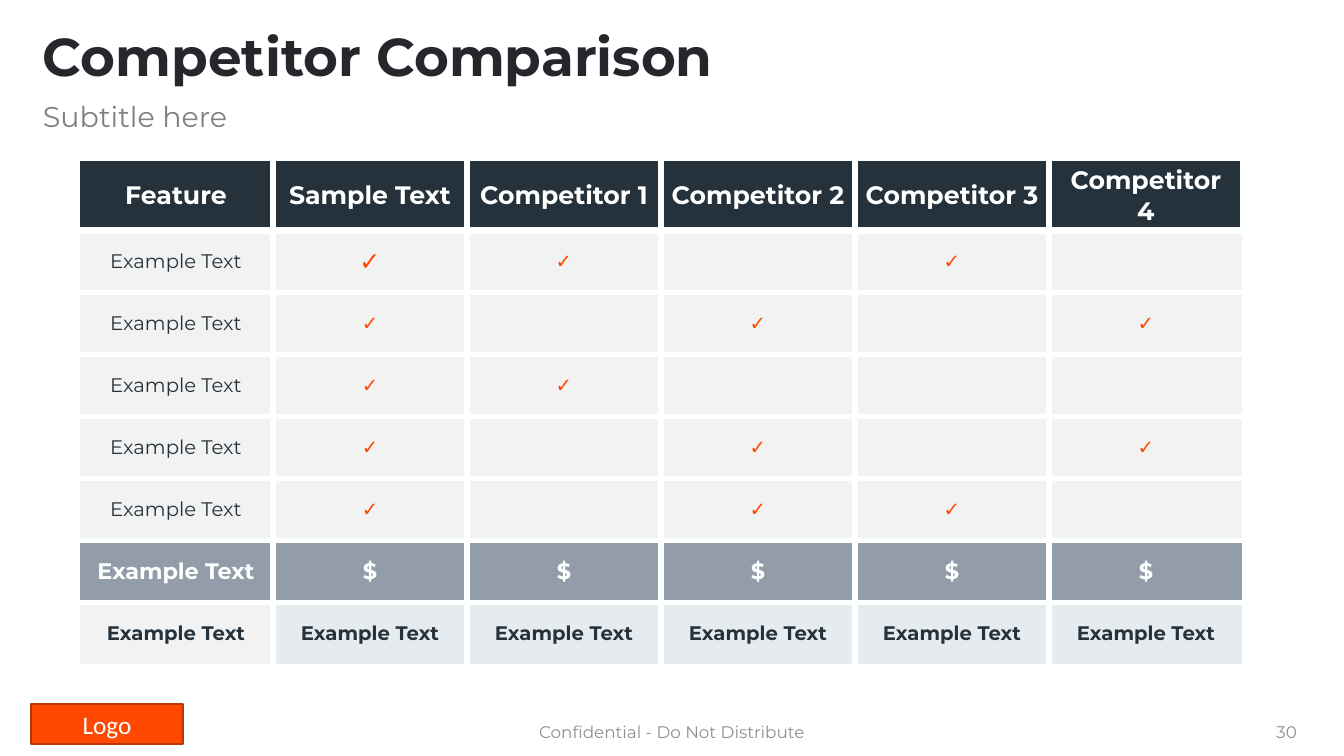
from lxml.etree import SubElement
from pptx import Presentation
from pptx.dml.color import RGBColor
from pptx.enum.shapes import MSO_SHAPE
from pptx.enum.text import MSO_ANCHOR, PP_ALIGN
from pptx.oxml.ns import qn
from pptx.util import Pt

EMU_PER_PX = 914400 / 100.8
WHITE, DARK, ORANGE = "FEFFFF", "25323C", "FF4800"
PALE, SLATE, MIST = "F2F2F2", "939DA9", "E5EBEF"
BODY_INK, GREY = "25323B", "8E9092"
FONT = "Montserrat"

COLUMN_WIDTH, ROW_HEIGHT = 194, 62
HEADINGS = ["Feature", "Sample Text"] + [f"Competitor {n}" for n in range(1, 5)]
# Columns that carry a check mark in each feature row
CHECKED_COLUMNS = [(1, 2, 4), (1, 3, 5), (1, 2), (1, 3, 5), (1, 3, 4)]


def px(length):
    return round(length * EMU_PER_PX)


def color(hex_code):
    return RGBColor.from_string(hex_code)


def paint(fill, hex_code):
    fill.solid()
    fill.fore_color.rgb = color(hex_code)


def write(frame, text, size, ink, bold=False, align=PP_ALIGN.CENTER, font=FONT, spacing=None):
    paragraph = frame.paragraphs[0]
    paragraph.alignment = align
    if spacing:
        paragraph.line_spacing = spacing
    run = paragraph.add_run()
    run.text = text
    run.font.name = font
    run.font.size = Pt(size)
    run.font.bold = bold
    run.font.color.rgb = color(ink)


def add_label(slide, box, text, size, ink, **style):
    frame = slide.shapes.add_textbox(*map(px, box)).text_frame
    frame.word_wrap = True
    frame.vertical_anchor = MSO_ANCHOR.MIDDLE
    write(frame, text, size, ink, **style)


def add_logo_plate(slide):
    plate = slide.shapes.add_shape(MSO_SHAPE.RECTANGLE, *map(px, (31, 704, 152, 40)))
    plate.shadow.inherit = False
    paint(plate.fill, ORANGE)
    plate.line.color.rgb = color("BD3500")
    plate.line.width = Pt(1)
    plate.text_frame.vertical_anchor = MSO_ANCHOR.MIDDLE
    write(plate.text_frame, "Logo", 18, WHITE, font="Calibri")


def add_borders(cell, left, right, top, bottom):
    """Draw the four cell borders in the background colour, widths in points."""
    properties = cell._tc.get_or_add_tcPr()
    for side, width in (("L", left), ("R", right), ("T", top), ("B", bottom)):
        border = SubElement(properties, qn(f"a:ln{side}"), w=str(Pt(width)))
        solid = SubElement(border, qn("a:solidFill"))
        SubElement(solid, qn("a:srgbClr"), val=WHITE)


def comparison_rows():
    """Return each row as cells of (text, size, ink, bold, fill)."""
    rows = [[(heading, 18, WHITE, True, DARK) for heading in HEADINGS]]
    for number, checked in enumerate(CHECKED_COLUMNS):
        row = [("Example Text", 14, BODY_INK, False, PALE)]
        for column in range(1, len(HEADINGS)):
            size = 18 if (number, column) == (0, 1) else 14
            row.append(("✓" if column in checked else "", size, ORANGE, True, PALE))
        rows.append(row)
    companies = len(HEADINGS) - 1
    rows.append([(text, 16, WHITE, True, SLATE) for text in ["Example Text"] + ["$"] * companies])
    rows.append([("Example Text", 14, BODY_INK, True, fill) for fill in [PALE] + [MIST] * companies])
    return rows


def add_comparison_table(slide):
    rows = comparison_rows()
    last_row, last_column = len(rows) - 1, len(HEADINGS) - 1
    table = slide.shapes.add_table(
        len(rows), len(HEADINGS), px(79), px(160),
        px(COLUMN_WIDTH * len(HEADINGS)), px(ROW_HEIGHT * len(rows))).table
    table.first_row = table.horz_banding = False
    for column in table.columns:
        column.width = px(COLUMN_WIDTH)
    for r, row in enumerate(rows):
        table.rows[r].height = px(ROW_HEIGHT)
        for c, (text, size, ink, bold, fill) in enumerate(row):
            cell = table.cell(r, c)
            add_borders(
                cell,
                left=1 if c == 0 else 4.5,
                right=1 if c == last_column and r > 0 else 4.5,
                top={0: 1, 1: 6}.get(r, 4.5),
                bottom={0: 6, last_row: 1}.get(r, 4.5))
            paint(cell.fill, fill)
            cell.vertical_anchor = MSO_ANCHOR.MIDDLE
            if text:
                write(cell.text_frame, text, size, ink, bold)


def main():
    deck = Presentation()
    deck.slide_width, deck.slide_height = px(1344), px(756)
    slide = deck.slides.add_slide(deck.slide_layouts[6])
    paint(slide.background.fill, WHITE)

    add_logo_plate(slide)
    add_label(slide, (33, 25, 1273, 68), "Competitor Comparison", 38, "28262D",
              bold=True, align=PP_ALIGN.LEFT, spacing=0.9)
    add_label(slide, (33, 99, 1273, 40), "Subtitle here", 20.4, "808080",
              align=PP_ALIGN.LEFT, spacing=0.8)
    add_comparison_table(slide)
    add_label(slide, (445, 712, 454, 40), "Confidential - Do Not Distribute", 12, GREY)
    add_label(slide, (1005, 712, 302, 40), "30", 12, GREY, align=PP_ALIGN.RIGHT)
    deck.save("out.pptx")


if __name__ == "__main__":
    main()
